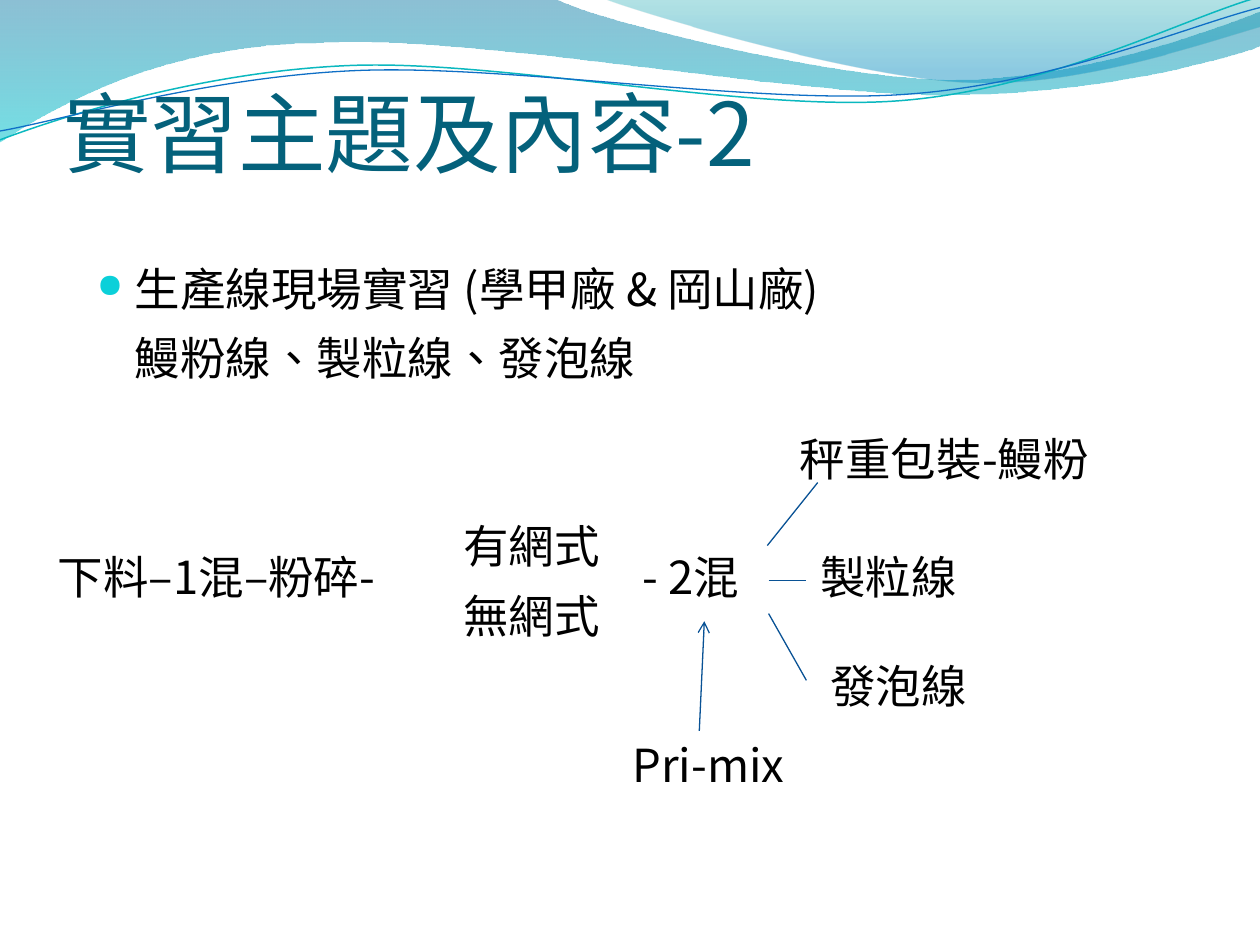
from dataclasses import dataclass
from math import cos, radians, sin
from lxml.etree import SubElement
from pptx import Presentation
from pptx.dml.color import RGBColor as RGB
from pptx.enum.shapes import MSO_CONNECTOR as CONN
from pptx.enum.text import MSO_ANCHOR as ANCHOR, MSO_AUTO_SIZE as FIT, PP_ALIGN as ALIGN
from pptx.oxml.ns import qn
from pptx.util import Inches, Pt


@dataclass(frozen=True)
class Theme:
    font: str = "Noto Sans CJK SC"
    title_size: float = 50
    body_size: float = 26
    line_width: float = 0.75
    title: str = "04617B"
    body: str = "000000"
    bullet: str = "0BD0D9"
    line: str = "095295"


THEME = Theme()
ROW_H = 0.62
MID_ROW = 4.31
FORK_X = 6.1
WAVE_TILT = -2.7
WAVE_CENTER = (4.99, 0.58)

BANDS = [
    ((0, -0.01),
     [[(4.4, -0.01)], [(4.76, 0.17), (6.64, 0.63), (7.58, 0.63)],
      [(8.53, 0.63), (9.58, 0.26), (10, 0.09)], [(10.01, 0.36)],
      [(9.83, 0.44), (8.7, 0.76), (7.46, 0.75)],
      [(6.22, 0.75), (3.82, 0.28), (2.57, 0.34)],
      [(1.29, 0.35), (0.46, 0.83), (-0.01, 1.13)], [(0, -0.01)]],
     [(0, "0074A1", 45), (1, "00C6CF", 55)]),
    ((4.79, -0.01),
     [[(5.09, 0.11), (6.82, 0.62), (7.69, 0.65)],
      [(8.56, 0.69), (9.61, 0.32), (10, 0.21)], [(10, 0)], [(4.79, -0.01)]],
     [(0, "00A1A9", 30), (0.8, "008BBF", 45)]),
]
WAVES = [
    ((0, 1.11),
     [[(0.48, 0.93), (1.58, 0.57), (2.77, 0.52)],
      [(3.95, 0.47), (5.93, 0.89), (7.13, 0.8)],
      [(8.33, 0.71), (9.38, 0.15), (9.98, -0.02)]], "0AB8BF", 0.85),
    ((0, 1.04),
     [[(0.47, 0.96), (1.64, 0.61), (2.83, 0.56)],
      [(4.03, 0.51), (5.97, 0.83), (7.17, 0.75)],
      [(8.36, 0.67), (9.41, 0.21), (10, 0.06)]], "0F6FC6", 0.75),
]
LABELS = [
    ("鰻粉線、製粒線、發泡線", 0.97, 2.57, 8.68),
    ("下料–1混–粉碎-", 0.36, MID_ROW, 3.23),
    ("有網式", 3.58, 4.06, 1.42),
    ("無網式", 3.58, 4.62, 1.42),
    ("- 2混", 5, MID_ROW, 1.18),
    ("秤重包裝-鰻粉", 6.25, 3.37, 3.24),
    ("製粒線", 6.41, MID_ROW, 2.92),
    ("發泡線", 6.49, 5.17, 3),
    ("Pri-mix", 4.92, 5.8, 1.5),
]
BRANCHES = [
    ((6.09, 4.33), (6.49, 3.83)),
    ((FORK_X, 4.61), (6.4, 4.61)),
    ((FORK_X, 4.87), (6.4, 5.4)),
]


def turn(point, degrees):
    a = radians(degrees)
    dx, dy = (v - c for v, c in zip(point, WAVE_CENTER))
    return (WAVE_CENTER[0] + dx * cos(a) - dy * sin(a),
            WAVE_CENTER[1] + dx * sin(a) + dy * cos(a))


def add_outline(s, start, segments, close):
    points = [(Inches(x), Inches(y)) for seg in segments for x, y in seg]
    builder = s.shapes.build_freeform(*map(Inches, start))
    builder.add_line_segments(points, close=close)
    sp = builder.convert_to_shape()
    sp.shadow.inherit = False
    steps = iter(list(sp.element.iter(qn("a:lnTo"))))
    for seg in segments:
        group = [next(steps) for _ in seg]
        if len(group) == 3:
            group[0].tag = qn("a:cubicBezTo")
            for step in group[1:]:
                group[0].append(step[0])
                step.getparent().remove(step)
    return sp


def add_band(s, start, segments, stops):
    sp = add_outline(s, start, segments, True)
    sp.line.fill.background()
    sp.fill.gradient()
    sp.fill.gradient_angle = 270
    for stop, (position, color, _) in zip(sp.fill.gradient_stops, stops):
        stop.position = position
        stop.color.rgb = RGB.from_string(color)
    for gs, (_, _, opacity) in zip(sp.element.iter(qn("a:gs")), stops):
        SubElement(gs[0], qn("a:alpha"), val=str(opacity * 1000))


def add_wave(s, start, segments, color, width):
    level = [[turn(point, -WAVE_TILT) for point in seg] for seg in segments]
    sp = add_outline(s, turn(start, -WAVE_TILT), level, False)
    sp.rotation = WAVE_TILT
    sp.fill.background()
    sp.line.color.rgb = RGB.from_string(color)
    sp.line.width = Pt(width)


def style_text(p, size, color):
    for r in p.runs:
        r.font.name = THEME.font
        r.font.size = Pt(size)
        r.font.color.rgb = RGB.from_string(color)
        rPr = r._r.get_or_add_rPr()
        rPr.set("lang", "zh-TW")
        SubElement(rPr, qn("a:ea"), typeface=THEME.font)


def add_label(s, text, x, y, w, h=ROW_H):
    sp = s.shapes.add_textbox(*map(Inches, (x, y, w, h)))
    tf = sp.text_frame
    tf.word_wrap = True
    tf.text = text
    p = tf.paragraphs[0]
    style_text(p, THEME.body_size, THEME.body)
    return p


def add_bullet(p):
    pPr = p._p.get_or_add_pPr()
    pPr.set("marL", str(Inches(0.3)))
    pPr.set("indent", str(-Inches(0.3)))
    color = SubElement(pPr, qn("a:buClr"))
    SubElement(color, qn("a:srgbClr"), val=THEME.bullet)
    SubElement(pPr, qn("a:buSzPct"), val="73000")
    SubElement(pPr, qn("a:buChar"), char="●")


def add_line(s, start, end, arrow=False):
    ends = [Inches(v) for v in (*start, *end)]
    line = s.shapes.add_connector(CONN.STRAIGHT, *ends)
    line.line.color.rgb = RGB.from_string(THEME.line)
    line.line.width = Pt(THEME.line_width)
    if arrow:
        SubElement(line.line._get_or_add_ln(), qn("a:tailEnd"), type="arrow")
    SubElement(line.element.spPr, qn("a:effectLst"))


def set_title(s, text):
    sp = s.shapes.title
    sp.left, sp.top, sp.width, sp.height = map(Inches, (0.5, 0.21, 9, 1.25))
    sp.element.getparent().append(sp.element)
    tf = sp.text_frame
    tf.text = text
    tf.auto_size = FIT.NONE
    tf.vertical_anchor = ANCHOR.BOTTOM
    tf.margin_left = tf.margin_right = tf.margin_bottom = 0
    tf.margin_top = Inches(0.05)
    p = tf.paragraphs[0]
    p.alignment = ALIGN.LEFT
    style_text(p, THEME.title_size, THEME.title)


def main():
    prs = Presentation()
    prs.slide_width, prs.slide_height = Inches(10), Inches(7.5)
    s = prs.slides.add_slide(prs.slide_layouts[5])
    for band in BANDS:
        add_band(s, *band)
    for wave in WAVES:
        add_wave(s, *wave)
    set_title(s, "實習主題及內容-2")
    add_bullet(add_label(s, "生產線現場實習 (學甲廠 & 岡山廠)", 0.67, 2.02, 9, 0.78))
    for label in LABELS:
        add_label(s, *label)
    for start, end in BRANCHES:
        add_line(s, start, end)
    add_line(s, (5.55, 5.8), (5.59, 4.93), arrow=True)
    prs.save("out.pptx")


if __name__ == "__main__":
    main()
